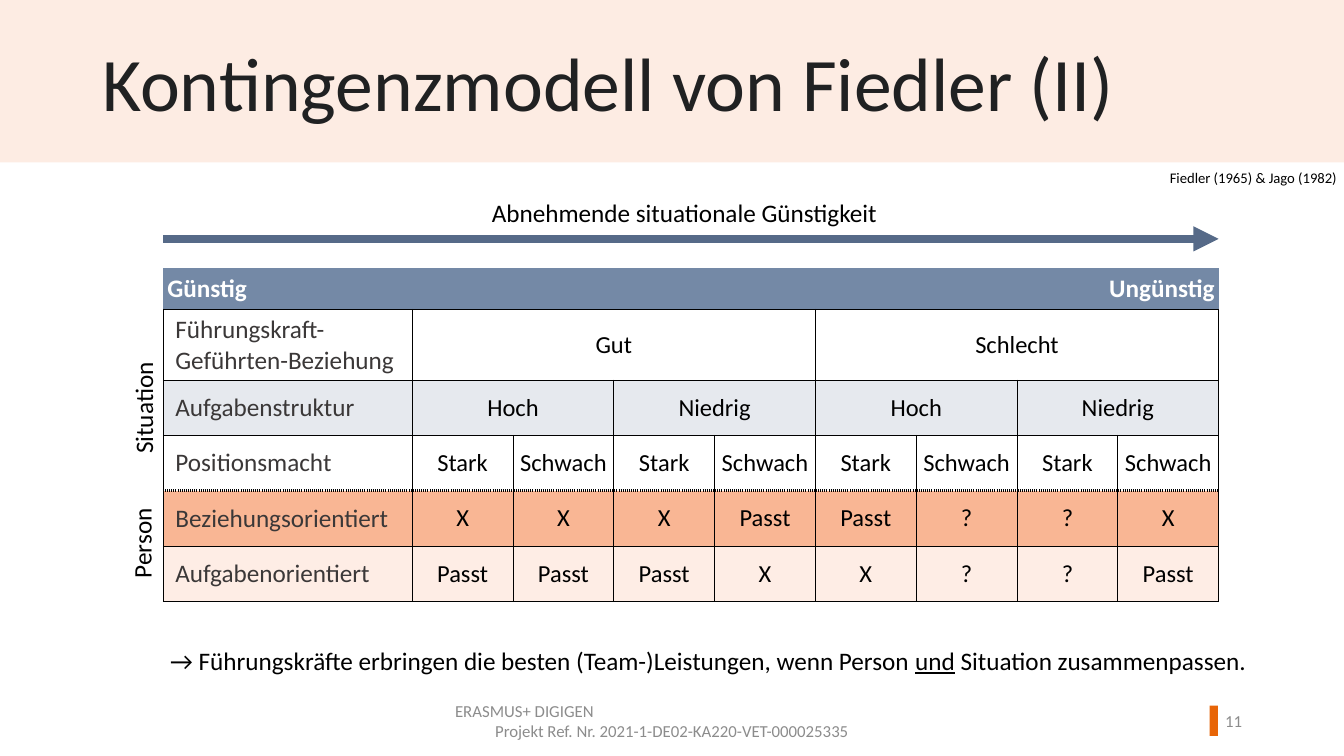
import pptx
import pptx.util
import pptx.dml.color
import pptx.enum.shapes
import pptx.enum.text
import pptx.oxml.ns
import lxml.etree

Pt = pptx.util.Pt
ALIGN = pptx.enum.text.PP_ALIGN
ANCHOR = pptx.enum.text.MSO_ANCHOR
AUTO = pptx.enum.text.MSO_AUTO_SIZE
FONT = "Calibri"
COLORS = {
    "band": "FDECE3", "accent": "E86507", "footer": "8C8C8C", "title": "202122",
    "black": "000000", "white": "FFFFFF", "label": "3B3838", "header": "7489A6",
    "arrow": "566A88", "structure": "E6E9EE", "relation": "F9B694", "task": "FEEDE5",
}
THIN = (0.75, "solid")
DOTTED = (2.25, "sysDot")
LABEL_WIDTH, VALUE_WIDTH = 177.84, 72
HEADER_HEIGHT, ROW_HEIGHT = 29.5, 39.6
VALUE_COLUMNS = 8
TABLE_LEFT, TABLE_TOP = 116.64, 191.5
TABLE_WIDTH = LABEL_WIDTH + VALUE_COLUMNS * VALUE_WIDTH
ROWS = [
    ("Führungskraft-Geführten-Beziehung", ["Gut", "Schlecht"], "white"),
    ("Aufgabenstruktur", ["Hoch", "Niedrig"] * 2, "structure"),
    ("Positionsmacht", ["Stark", "Schwach"] * 4, "white"),
    ("Beziehungsorientiert", ["X", "X", "X", "Passt", "Passt", "?", "?", "X"], "relation"),
    ("Aufgabenorientiert", ["Passt", "Passt", "Passt", "X", "X", "?", "?", "Passt"], "task"),
]
DOTTED_ABOVE = 4


def rgb(name):
    return pptx.dml.color.RGBColor.from_string(COLORS[name])


def add_run(p, text, size, color, bold=False, underline=None):
    r = p.add_run()
    r.text = text
    r.font.name = FONT
    r.font.size = Pt(size)
    r.font.bold = bold
    r.font.underline = underline
    r.font.color.rgb = rgb(color)


def add_rect(s, left, top, width, height, color):
    sp = s.shapes.add_shape(pptx.enum.shapes.MSO_SHAPE.RECTANGLE,
                            Pt(left), Pt(top), Pt(width), Pt(height))
    sp.shadow.inherit = False
    sp.fill.solid()
    sp.fill.fore_color.rgb = rgb(color)
    sp.line.fill.background()


def add_text(s, box, paragraphs, size, color="black", anchor=ANCHOR.TOP,
             wrap=True, grow=False, rotation=0, spacing=None):
    sp = s.shapes.add_textbox(*[Pt(v) for v in box])
    sp.rotation = rotation
    tf = sp.text_frame
    tf.word_wrap = wrap
    tf.auto_size = AUTO.SHAPE_TO_FIT_TEXT if grow else AUTO.NONE
    tf.vertical_anchor = anchor
    for i, (align, runs) in enumerate(paragraphs):
        p = tf.add_paragraph() if i else tf.paragraphs[0]
        p.alignment = align
        p.line_spacing = spacing
        for text, underline in runs:
            add_run(p, text, size, color, underline=underline)


def add_arrow(s, left, right, y):
    cn = s.shapes.add_connector(pptx.enum.shapes.MSO_CONNECTOR.STRAIGHT,
                                Pt(left), Pt(y), Pt(right), Pt(y))
    cn.line.width = Pt(6)
    cn.line.color.rgb = rgb("arrow")
    qn = pptx.oxml.ns.qn
    lxml.etree.SubElement(cn.line._get_or_add_ln(), qn("a:tailEnd"), type="triangle")
    lxml.etree.SubElement(cn._element.spPr, qn("a:effectLst"))


def set_borders(cell, left, right, top, bottom):
    qn = pptx.oxml.ns.qn
    tcPr = cell._tc.get_or_add_tcPr()
    for side, border in zip("LRTB", (left, right, top, bottom)):
        ln = lxml.etree.SubElement(tcPr, qn("a:ln" + side))
        if border is None:
            lxml.etree.SubElement(ln, qn("a:noFill"))
            continue
        width, dash = border
        ln.set("w", str(int(Pt(width))))
        fill = lxml.etree.SubElement(ln, qn("a:solidFill"))
        lxml.etree.SubElement(fill, qn("a:srgbClr"), val=COLORS["black"])
        lxml.etree.SubElement(ln, qn("a:prstDash"), val=dash)


def style_cell(cell, fill, borders):
    set_borders(cell, *borders)
    cell.fill.solid()
    cell.fill.fore_color.rgb = rgb(fill)


def fill_cell(cell, text, align, size, color, anchor=ANCHOR.MIDDLE, inset=2.88, bold=False):
    cell.margin_left, cell.margin_right = Pt(inset), Pt(2.88)
    cell.margin_top = cell.margin_bottom = Pt(3.6)
    cell.vertical_anchor = anchor
    p = cell.text_frame.paragraphs[0]
    p.alignment = align
    add_run(p, text, size, color, bold)


def add_contingency_table(s):
    height = HEADER_HEIGHT + len(ROWS) * ROW_HEIGHT
    tbl = s.shapes.add_table(len(ROWS) + 1, VALUE_COLUMNS + 1, Pt(TABLE_LEFT), Pt(TABLE_TOP),
                             Pt(TABLE_WIDTH), Pt(height)).table
    tbl.first_row = tbl.horz_banding = False
    for i, col in enumerate(tbl.columns):
        col.width = Pt(VALUE_WIDTH if i else LABEL_WIDTH)
    for i, row in enumerate(tbl.rows):
        row.height = Pt(ROW_HEIGHT if i else HEADER_HEIGHT)

    for col in range(VALUE_COLUMNS + 1):
        style_cell(tbl.cell(0, col), "header", (None, None, None, THIN))
    tbl.cell(0, 1).merge(tbl.cell(0, 3))
    tbl.cell(0, 4).merge(tbl.cell(0, VALUE_COLUMNS))
    for col, text, align in ((0, "Günstig", ALIGN.LEFT), (4, "Ungünstig", ALIGN.RIGHT)):
        fill_cell(tbl.cell(0, col), text, align, 18, "white", ANCHOR.TOP, bold=True)

    for i, (label, values, fill) in enumerate(ROWS, 1):
        top = DOTTED if i == DOTTED_ABOVE else THIN
        bottom = DOTTED if i + 1 == DOTTED_ABOVE else THIN
        for col in range(VALUE_COLUMNS + 1):
            style_cell(tbl.cell(i, col), fill, (THIN, THIN, top, bottom))
        fill_cell(tbl.cell(i, 0), label, ALIGN.LEFT, 18, "label", inset=8.64)
        span = VALUE_COLUMNS // len(values)
        for j, value in enumerate(values):
            first = 1 + j * span
            if span > 1:
                tbl.cell(i, first).merge(tbl.cell(i, first + span - 1))
            fill_cell(tbl.cell(i, first), value, ALIGN.CENTER, 17.5, "black")


def main():
    prs = pptx.Presentation()
    prs.slide_width, prs.slide_height = Pt(960), Pt(540)
    s = prs.slides.add_slide(prs.slide_layouts[6])
    add_rect(s, 0, 0, 960, 116, "band")
    add_rect(s, 864, 504, 6, 21.6, "accent")
    add_text(s, (318, 500.4, 324, 28.8),
             [(ALIGN.LEFT, [("ERASMUS+ DIGIGEN", None)]),
              (ALIGN.CENTER, [("Projekt Ref. Nr. 2021-1-DE02-KA220-VET-000025335", None)])],
             12, "footer", ANCHOR.MIDDLE)
    add_text(s, (847.5, 500.4, 46.8, 28.8), [(ALIGN.RIGHT, [("11", None)])],
             12, "footer", ANCHOR.MIDDLE)
    add_text(s, (66, 29.5, 786, 61.2),
             [(ALIGN.LEFT, [("Kontingenzmodell von Fiedler (II)", None)])],
             54, "title", spacing=0.9)
    add_text(s, (810, 117.4, 152, 20), [(ALIGN.RIGHT, [("Fiedler (1965) & Jago (1982)", None)])],
             10.5, grow=True)
    add_contingency_table(s)
    add_arrow(s, TABLE_LEFT, TABLE_LEFT + TABLE_WIDTH, 170.6)
    conclusion = [
        ("→ Führungskräfte erbringen die besten (Team-)Leistungen, wenn Person ", None),
        ("und", True),
        (" Situation zusammenpassen.", None),
    ]
    for box, runs, rotation in (
        ((344.2, 137.5, 301, 28.8), [("Abnehmende situationale Günstigkeit", None)], 0),
        ((114.5, 457.2, 822.2, 28.8), conclusion, 0),
        ((61.9, 276.5, 80.6, 28.8), [("Situation", None)], 270),
        ((67.7, 372.2, 67, 28.8), [("Person", None)], 270),
    ):
        add_text(s, box, [(ALIGN.LEFT, runs)], 18, wrap=False, grow=True, rotation=rotation)
    prs.save("out.pptx")


if __name__ == "__main__":
    main()
